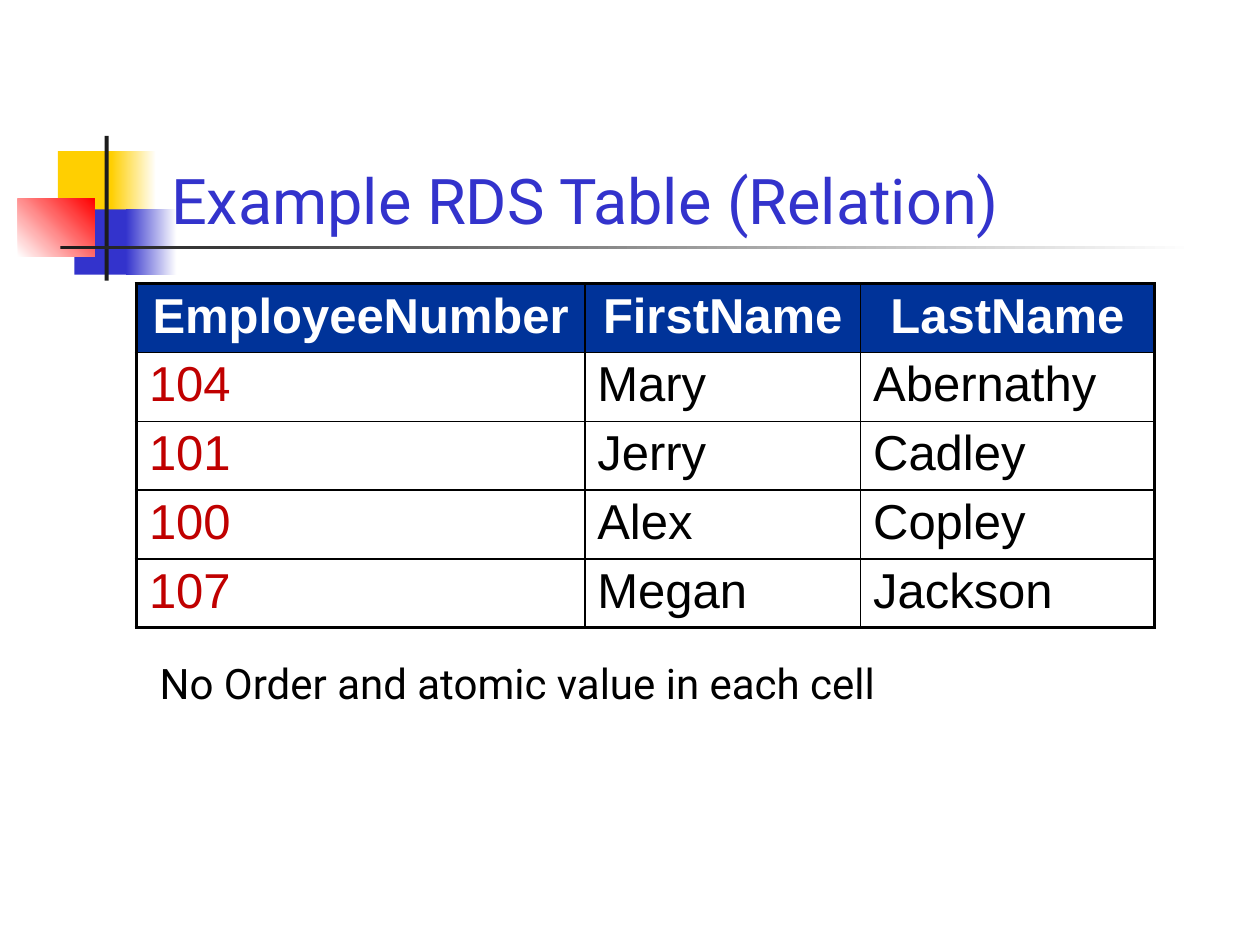
from lxml.etree import SubElement
from pptx import Presentation
from pptx.dml.color import RGBColor
from pptx.enum.shapes import MSO_SHAPE
from pptx.enum.text import MSO_ANCHOR as ANCHOR, PP_ALIGN as ALIGN
from pptx.oxml.ns import qn
from pptx.util import Cm, Pt

COLORS = {
    "yellow": "FFCF01", "blue": "3333CC", "red": "FF0000", "dark": "1C1C1C",
    "white": "FFFFFF", "black": "000000", "header": "003399", "key": "C00000",
}
DECORATIONS = [
    ((1.17, 3.05, 1.22, 1.32), ["yellow"], 0),
    ((2.24, 3.05, 0.91, 1.32), ["yellow", "white"], 0),
    ((1.5, 4.22, 1.17, 1.32), ["blue"], 0),
    ((2.54, 4.22, 1.02, 1.32), ["blue", "white"], 0),
    ((0.36, 4.01, 1.55, 1.17), ["white", "red"], 45),
    ((2.11, 2.74, 0.08, 2.92), ["dark"], 0),
    ((1.22, 4.95, 22.86, 0.08), ["dark", "white"], 0),
]
EMPLOYEES = [
    ("EmployeeNumber", "FirstName", "LastName"),
    ("104", "Mary", "Abernathy"),
    ("101", "Jerry", "Cadley"),
    ("100", "Alex", "Copley"),
    ("107", "Megan", "Jackson"),
]
COLUMN_WIDTHS = [9.04, 5.56, 5.92]
ROW_HEIGHT = 1.35
THICK, THIN = 2.25, 1


def rgb(name):
    return RGBColor.from_string(COLORS[name])


def format_text(paragraph, text, color, **font_values):
    run = paragraph.add_run()
    run.text = text
    run.font.color.rgb = rgb(color)
    for name, value in font_values.items():
        setattr(run.font, name, value)


def add_block(slide, box, colors, angle):
    shape = slide.shapes.add_shape(MSO_SHAPE.RECTANGLE, *map(Cm, box))
    shape.shadow.inherit = False
    shape.line.fill.background()
    if len(colors) == 1:
        shape.fill.solid()
        shape.fill.fore_color.rgb = rgb(colors[0])
        return
    shape.fill.gradient()
    shape.fill.gradient_angle = angle
    for stop, color in zip(shape.fill.gradient_stops, colors):
        stop.color.rgb = rgb(color)


def add_text(slide, box, text, color, size, anchor):
    frame = slide.shapes.add_textbox(*map(Cm, box)).text_frame
    frame.word_wrap = True
    frame.vertical_anchor = anchor
    format_text(frame.paragraphs[0], text, color, name="Roboto", size=Pt(size))


def set_borders(cell, widths):
    properties = cell._tc.get_or_add_tcPr()
    for side, width in widths.items():
        line = SubElement(properties, qn(f"a:ln{side}"), w=str(Pt(width)))
        fill = SubElement(line, qn("a:solidFill"))
        SubElement(fill, qn("a:srgbClr"), val=COLORS["black"])


def fill_cell(cell, text, row, column):
    last_row, last_column = len(EMPLOYEES) - 1, len(COLUMN_WIDTHS) - 1
    header = row == 0
    set_borders(cell, {
        "L": THICK if column == 0 else THIN,
        "R": THICK if column == last_column else THIN,
        "T": THICK if header else THIN,
        "B": THICK if row == last_row else THIN,
    })
    if header:
        cell.fill.solid()
        cell.fill.fore_color.rgb = rgb("header")
    else:
        cell.fill.background()
    cell.margin_top = cell.margin_bottom = Cm(0.1)
    paragraph = cell.text_frame.paragraphs[0]
    paragraph.alignment = ALIGN.CENTER if header else ALIGN.LEFT
    color = "white" if header else "key" if column == 0 else "black"
    format_text(paragraph, text, color, name="Arial", size=Pt(28), bold=header)


def add_employee_table(slide, left, top):
    row_count = len(EMPLOYEES)
    table = slide.shapes.add_table(
        row_count, len(COLUMN_WIDTHS), Cm(left), Cm(top),
        Cm(sum(COLUMN_WIDTHS)), Cm(ROW_HEIGHT * row_count)).table
    table.first_row = table.horz_banding = False
    for column, width in zip(table.columns, COLUMN_WIDTHS):
        column.width = Cm(width)
    for row, values in enumerate(EMPLOYEES):
        table.rows[row].height = Cm(ROW_HEIGHT)
        for column, text in enumerate(values):
            fill_cell(table.cell(row, column), text, row, column)


def main():
    presentation = Presentation()
    presentation.slide_width, presentation.slide_height = Cm(25.4), Cm(19.05)
    slide = presentation.slides.add_slide(presentation.slide_layouts[6])
    for box, colors, angle in DECORATIONS:
        add_block(slide, box, colors, angle)
    add_text(slide, (3.2, 1.73, 21.64, 3.17), "Example RDS Table (Relation)",
             "blue", 36, ANCHOR.BOTTOM)
    add_employee_table(slide, 2.75, 5.72)
    add_text(slide, (2.97, 13.13, 20.32, 1.27),
             "No Order and atomic value in each cell", "black", 24, ANCHOR.TOP)
    presentation.save("out.pptx")


if __name__ == "__main__":
    main()
